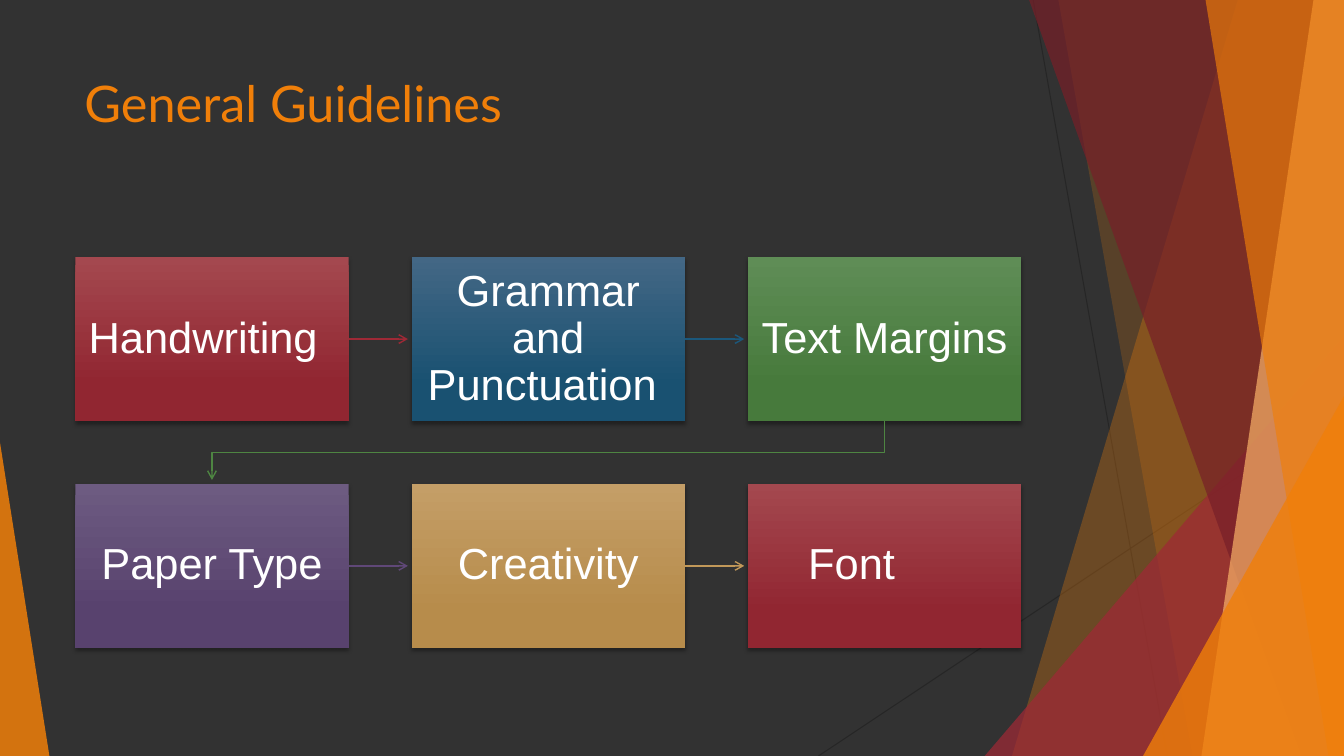
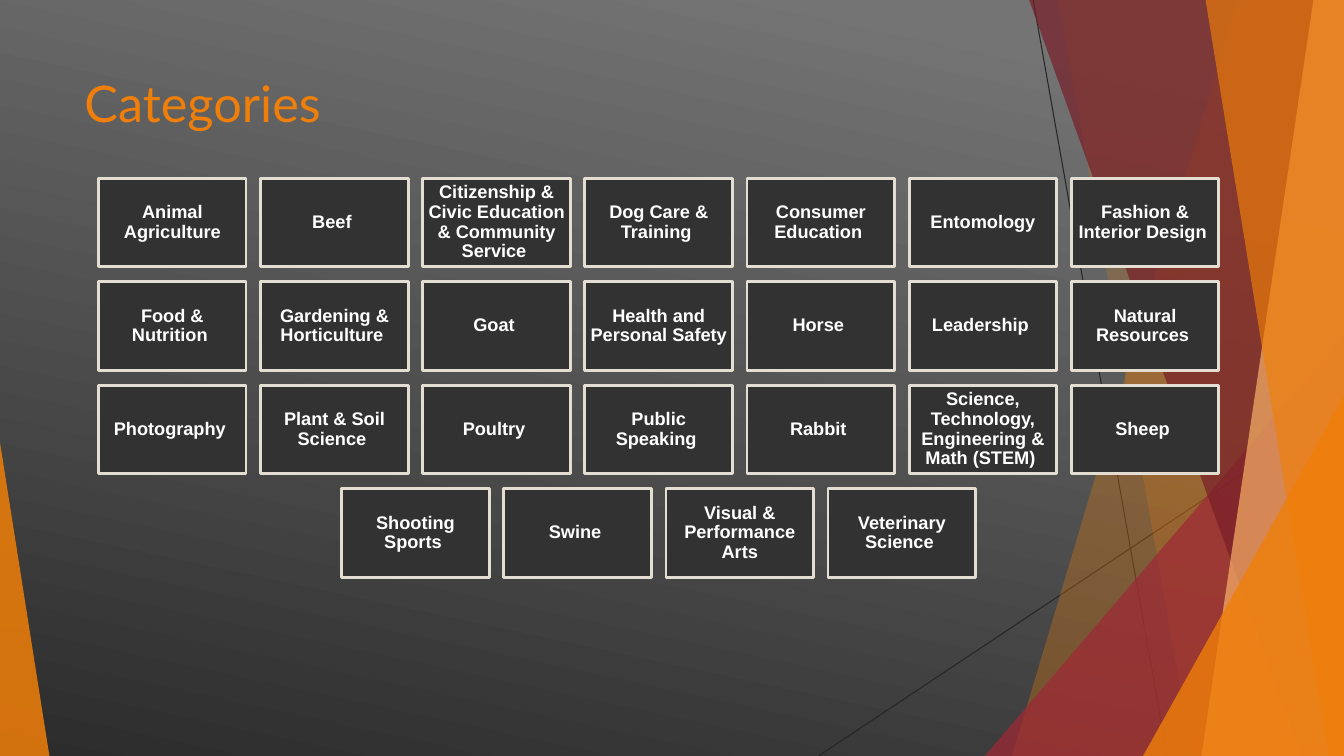
"""Build two dark slides with orange shards: a guideline flow and a category grid."""
import dataclasses

import lxml.etree
import pptx
import pptx.dml.color
import pptx.enum.shapes
import pptx.enum.text
import pptx.oxml.ns
import pptx.util

Pt = pptx.util.Pt
qn = pptx.oxml.ns.qn
RGB = pptx.dml.color.RGBColor.from_string
SHAPES = pptx.enum.shapes.MSO_SHAPE
ANCHOR = pptx.enum.text.MSO_ANCHOR
ALIGN = pptx.enum.text.PP_ALIGN


@dataclasses.dataclass(frozen=True)
class Theme:
    width: float = 960
    height: float = 540
    title_font: str = "Lato"
    body_font: str = "Arial"
    title_size: float = 36
    step_size: float = 31
    tile_size: float = 13
    dark: str = "323232"
    hairline: str = "262626"
    orange: str = "F07F09"
    peach: str = "F9B268"
    crimson: str = "9F2936"
    maroon: str = "771F28"
    cream: str = "E3DED1"
    white: str = "FFFFFF"
    black: str = "000000"
    backdrop: tuple = ((10, "747474"), (100, "2C2C2C"))
    red: tuple = ("9F2936", "A4484F", "912631")
    blue: tuple = ("1B587C", "436785", "195171")
    green: tuple = ("4E8542", "5F8D56", "477A3C")
    purple: tuple = ("604878", "6D5B81", "58426E")
    gold: tuple = ("C19859", "C49E67", "B78C4B")


class SlideBuilder:
    def __init__(self, theme):
        self.theme = theme
        self.deck = pptx.Presentation()
        self.deck.slide_width = Pt(theme.width)
        self.deck.slide_height = Pt(theme.height)
        self.page = None

    def start_page(self, title, gradient=None):
        self.page = self.deck.slides.add_slide(self.deck.slide_layouts[6])
        fill = self.page.background.fill
        if gradient:
            self.paint_gradient(fill, gradient, 102)
        else:
            fill.solid()
            fill.fore_color.rgb = RGB(self.theme.dark)
        self.add_decoration()
        box = self.page.shapes.add_textbox(Pt(53.3), Pt(48.2), Pt(676.8), Pt(103.7))
        self.set_text(box, title, self.theme.title_font, self.theme.title_size,
                      self.theme.orange)

    def add_decoration(self):
        theme = self.theme
        self.add_line((738, 0), (833.8, 540), theme.hairline, 0.75)
        self.add_line((960, 290.2), (584.6, 540), theme.hairline, 0.75)
        self.add_blade(884.2, 722.9, theme.orange, 30)
        self.add_blade(756, 851.8, theme.orange, 20)
        self.add_triangle(703.4, 239.8, 256.6, 1, theme.crimson, 72)
        self.add_blade(735.1, 929.5, theme.maroon, 70)
        self.add_blade(938.2, 858.2, theme.peach, 70)
        self.add_blade(861.1, 949, theme.orange, 65)
        self.add_triangle(816.5, 283, 143.5, 1, theme.orange, 80)
        self.add_triangle(0, 316.1, 35.3, 0, theme.orange, 85)

    def paint_gradient(self, fill, stops, angle):
        fill.gradient()
        fill.gradient_angle = 360 - angle
        for stop, (position, color) in zip(fill.gradient_stops, stops):
            stop.position = position / 100
            stop.color.rgb = RGB(color)

    def paint_glass(self, shape, color, opacity):
        shape.shadow.inherit = False
        shape.line.fill.background()
        shape.fill.solid()
        shape.fill.fore_color.rgb = RGB(color)
        self.add_alpha(shape.element.spPr.find(".//" + qn("a:srgbClr")), opacity)

    def add_alpha(self, color_element, opacity):
        lxml.etree.SubElement(color_element, qn("a:alpha"), val=str(opacity * 1000))

    def add_outline(self, points, close):
        start, *rest = [(Pt(x), Pt(y)) for x, y in points]
        builder = self.page.shapes.build_freeform(*start)
        builder.add_line_segments(rest, close=close)
        return builder.convert_to_shape()

    def add_blade(self, top_x, bottom_x, color, opacity):
        width, height = self.theme.width, self.theme.height
        points = [(top_x, 0), (width, 0), (width, height), (bottom_x, height)]
        self.paint_glass(self.add_outline(points, True), color, opacity)

    def add_triangle(self, left, top, width, apex, color, opacity):
        triangle = self.page.shapes.add_shape(
            SHAPES.ISOSCELES_TRIANGLE, Pt(left), Pt(top), Pt(width),
            Pt(self.theme.height - top))
        triangle.adjustments[0] = apex
        self.paint_glass(triangle, color, opacity)

    def add_line(self, start, end, color, width):
        line = self.page.shapes.add_connector(
            pptx.enum.shapes.MSO_CONNECTOR.STRAIGHT, *map(Pt, start + end))
        self.style_line(line, color, width)
        lxml.etree.SubElement(line.element.spPr, qn("a:effectLst"))
        return line

    def style_line(self, shape, color, width):
        shape.line.color.rgb = RGB(color)
        shape.line.width = Pt(width)

    def add_arrowhead(self, shape):
        outline = shape.element.spPr.find(qn("a:ln"))
        lxml.etree.SubElement(outline, qn("a:tailEnd"), type="arrow")

    def add_arrow(self, box, length, color):
        x = (box.left + box.width) / Pt(1)
        y = (box.top + box.height / 2) / Pt(1)
        arrow = self.add_line((x, y), (x + length, y), color, 1)
        arrow.begin_connect(box, 3)
        self.add_arrowhead(arrow)

    def add_bent_arrow(self, points, color):
        arrow = self.add_outline(points, False)
        arrow.shadow.inherit = False
        arrow.fill.background()
        self.style_line(arrow, color, 1)
        self.add_arrowhead(arrow)

    def add_box(self, left, top, width, height):
        box = self.page.shapes.add_shape(
            SHAPES.RECTANGLE, Pt(left), Pt(top), Pt(width), Pt(height))
        box.shadow.inherit = False
        return box

    def add_step(self, left, top, width, height, text, hue, indent):
        box = self.add_box(left, top, width, height)
        self.paint_gradient(box.fill, ((0, hue[1]), (78, hue[2])), 90)
        box.line.fill.background()
        self.add_drop_shadow(box)
        self.set_text(box, text, self.theme.body_font, self.theme.step_size,
                      self.theme.white)
        self.center(box, 9, 9, 9 + indent)
        return box

    def add_drop_shadow(self, box):
        effects = box.element.spPr.find(qn("a:effectLst"))
        shadow = lxml.etree.SubElement(
            effects, qn("a:outerShdw"), blurRad=str(Pt(3)), dist=str(Pt(2)),
            dir="5400000", rotWithShape="0")
        color = lxml.etree.SubElement(shadow, qn("a:srgbClr"), val=self.theme.black)
        self.add_alpha(color, 35)

    def add_tile(self, left, top, width, height, text):
        box = self.add_box(left, top, width, height)
        box.fill.solid()
        box.fill.fore_color.rgb = RGB(self.theme.dark)
        self.style_line(box, self.theme.cream, 2)
        self.set_text(box, text, self.theme.body_font, self.theme.tile_size,
                      self.theme.white, True)
        self.center(box, 3, 3, 3)

    def set_text(self, box, text, font, size, color, bold=False):
        frame = box.text_frame
        frame.word_wrap = True
        frame.text = text
        for span in frame.paragraphs[0].runs:
            span.font.name = font
            span.font.size = Pt(size)
            span.font.bold = bold
            span.font.color.rgb = RGB(color)

    def center(self, box, edge, left, right):
        frame = box.text_frame
        frame.vertical_anchor = ANCHOR.MIDDLE
        frame.margin_top = frame.margin_bottom = Pt(edge)
        frame.margin_left, frame.margin_right = Pt(left), Pt(right)
        para = frame.paragraphs[0]
        para.alignment = ALIGN.CENTER
        para.line_spacing = 0.9


def build_guidelines(builder):
    theme = builder.theme
    builder.start_page("General Guidelines")
    left, top, width, height = 53.8, 183.6, 195.2, 117.2
    column_pitch, row_pitch, columns = 240.2, 162, 3
    steps = [
        ("Handwriting ", theme.red, 4),
        ("Grammar and Punctuation ", theme.blue, 0),
        ("Text Margins", theme.green, 0),
        ("Paper Type", theme.purple, 0),
        ("Creativity", theme.gold, 0),
        ("Font", theme.red, 47),
    ]
    for index, (text, hue, indent) in enumerate(steps):
        row, column = divmod(index, columns)
        box = builder.add_step(left + column * column_pitch, top + row * row_pitch,
                               width, height, text, hue, indent)
        if column < columns - 1:
            builder.add_arrow(box, 42.4, hue[0])
    first_x = left + width / 2
    last_x = first_x + (columns - 1) * column_pitch
    bottom, next_top = top + height, top + row_pitch
    middle = (bottom + next_top) / 2
    builder.add_bent_arrow([(last_x, bottom), (last_x, middle), (first_x, middle),
                            (first_x, next_top - 2.8)], theme.green[0])


def build_categories(builder):
    builder.start_page("Categories", builder.theme.backdrop)
    left, top, width, height = 70.4, 127.4, 105.4, 63.2
    column_pitch, row_pitch = 115.8, 73.9
    rows = [
        ["Animal Agriculture", "Beef ",
         "Citizenship & Civic Education & Community Service ",
         "Dog Care & Training ", "Consumer Education ", "Entomology",
         "Fashion & Interior Design "],
        ["Food & Nutrition ", "Gardening & Horticulture ", "Goat ",
         "Health and Personal Safety ", "Horse ", "Leadership ",
         "Natural Resources "],
        ["Photography ", "Plant & Soil Science ", "Poultry ", "Public Speaking ",
         "Rabbit ", "Science, Technology, Engineering & Math (STEM) ", "Sheep "],
        ["Shooting Sports ", "Swine ", "Visual & Performance Arts",
         "Veterinary Science "],
    ]
    for row, names in enumerate(rows):
        offset = (len(rows[0]) - len(names)) / 2
        for column, name in enumerate(names):
            builder.add_tile(left + (column + offset) * column_pitch,
                             top + row * row_pitch, width, height, name)


def main():
    builder = SlideBuilder(Theme())
    build_guidelines(builder)
    build_categories(builder)
    builder.deck.save("out.pptx")


if __name__ == "__main__":
    main()
